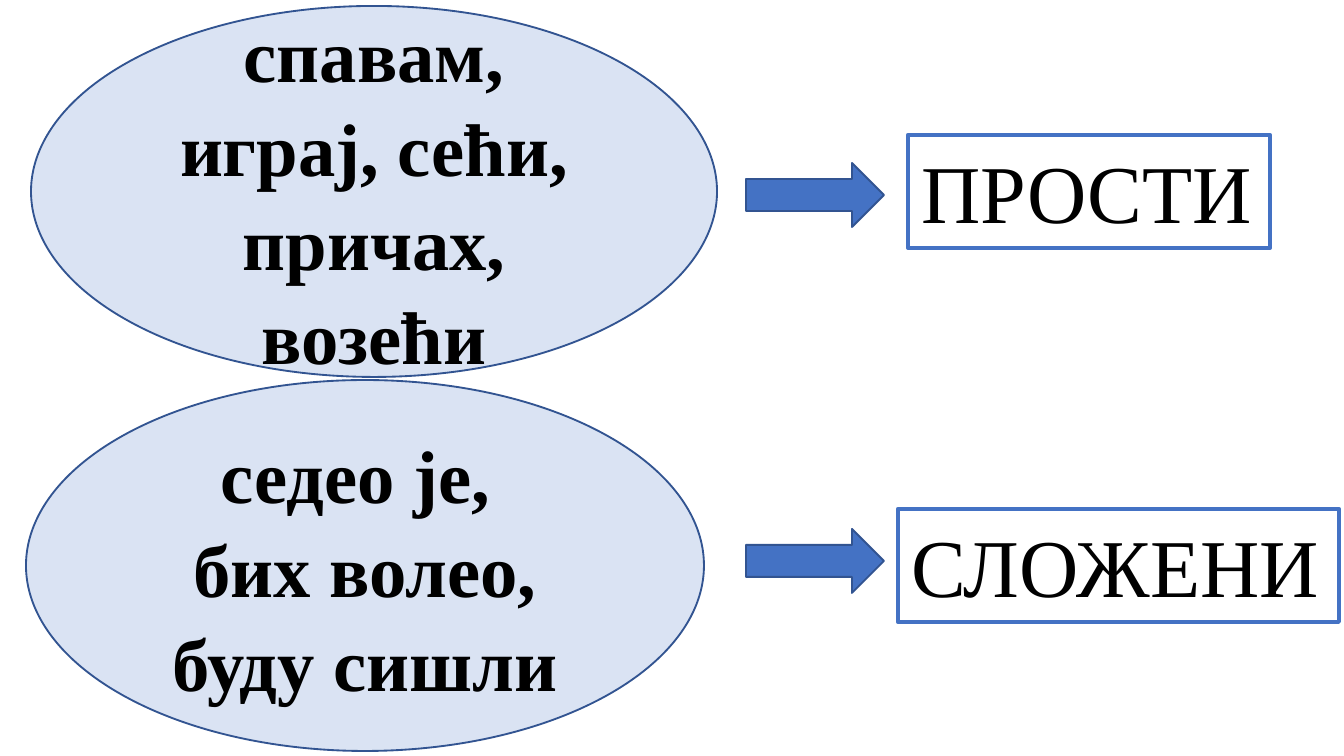
from pptx import Presentation
from pptx.dml.color import RGBColor
from pptx.enum.shapes import MSO_SHAPE
from pptx.enum.text import MSO_ANCHOR, MSO_AUTO_SIZE, PP_ALIGN
from pptx.util import Pt

OVAL, ARROW, BOX = MSO_SHAPE.OVAL, MSO_SHAPE.RIGHT_ARROW, MSO_SHAPE.RECTANGLE
MIDDLE, TOP = MSO_ANCHOR.MIDDLE, MSO_ANCHOR.TOP
CENTER, LEFT = PP_ALIGN.CENTER, PP_ALIGN.LEFT
GROW = MSO_AUTO_SIZE.SHAPE_TO_FIT_TEXT

PX = 914400 / 134.4
COLORS = {"oval": "DAE3F3", "edge": "325491", "accent": "4472C4", "text": "000000"}


def rgb(name):
    return RGBColor.from_string(COLORS[name])


def add_figure(kind, bounds, fill, edge, edge_width):
    """Add a shadowless shape with bounds in px; fill None leaves it open."""
    figure = slide.shapes.add_shape(kind, *(round(n * PX) for n in bounds))
    figure.shadow.inherit = False
    if fill:
        figure.fill.solid()
        figure.fill.fore_color.rgb = rgb(fill)
    else:
        figure.fill.background()
    figure.line.color.rgb = rgb(edge)
    figure.line.width = Pt(edge_width)
    return figure


prs = Presentation()
prs.slide_width, prs.slide_height = round(1344 * PX), round(756 * PX)
slide = prs.slides.add_slide(prs.slide_layouts[6])

# Verb examples, their oval, the arrow's top, the tense group and its box
verb_groups = [
    (["спавам, играј, сећи,", "причах, возећи"], (31, 6, 686, 371),
     163, "ПРОСТИ", (908, 135, 362, 113)),
    (["седео је, ", "бих волео,", "буду сишли"], (26, 380, 678, 371),
     529, "СЛОЖЕНИ", (898, 509, 441, 113)),
]

for examples, oval_bounds, arrow_top, group, box_bounds in verb_groups:
    oval = add_figure(OVAL, oval_bounds, "oval", "edge", 1)
    add_figure(ARROW, (746, arrow_top, 138, 64), "accent", "edge", 1)
    box = add_figure(BOX, box_bounds, None, "accent", 2.25)
    box.text_frame.auto_size = GROW

    for figure, lines, size, bold, align, anchor, spacing in (
        (oval, examples, 40, True, CENTER, MIDDLE, 1.05),
        (box, [group], 44, False, LEFT, TOP, 1),
    ):
        frame = figure.text_frame
        frame.word_wrap = True
        frame.vertical_anchor = anchor
        frame.text = "\n".join(lines)
        for paragraph in frame.paragraphs:
            paragraph.alignment = align
            paragraph.line_spacing = spacing
            paragraph.font.name = "Times New Roman"
            paragraph.font.size = Pt(size)
            paragraph.font.bold = bold
            paragraph.font.color.rgb = rgb("text")

prs.save("out.pptx")
